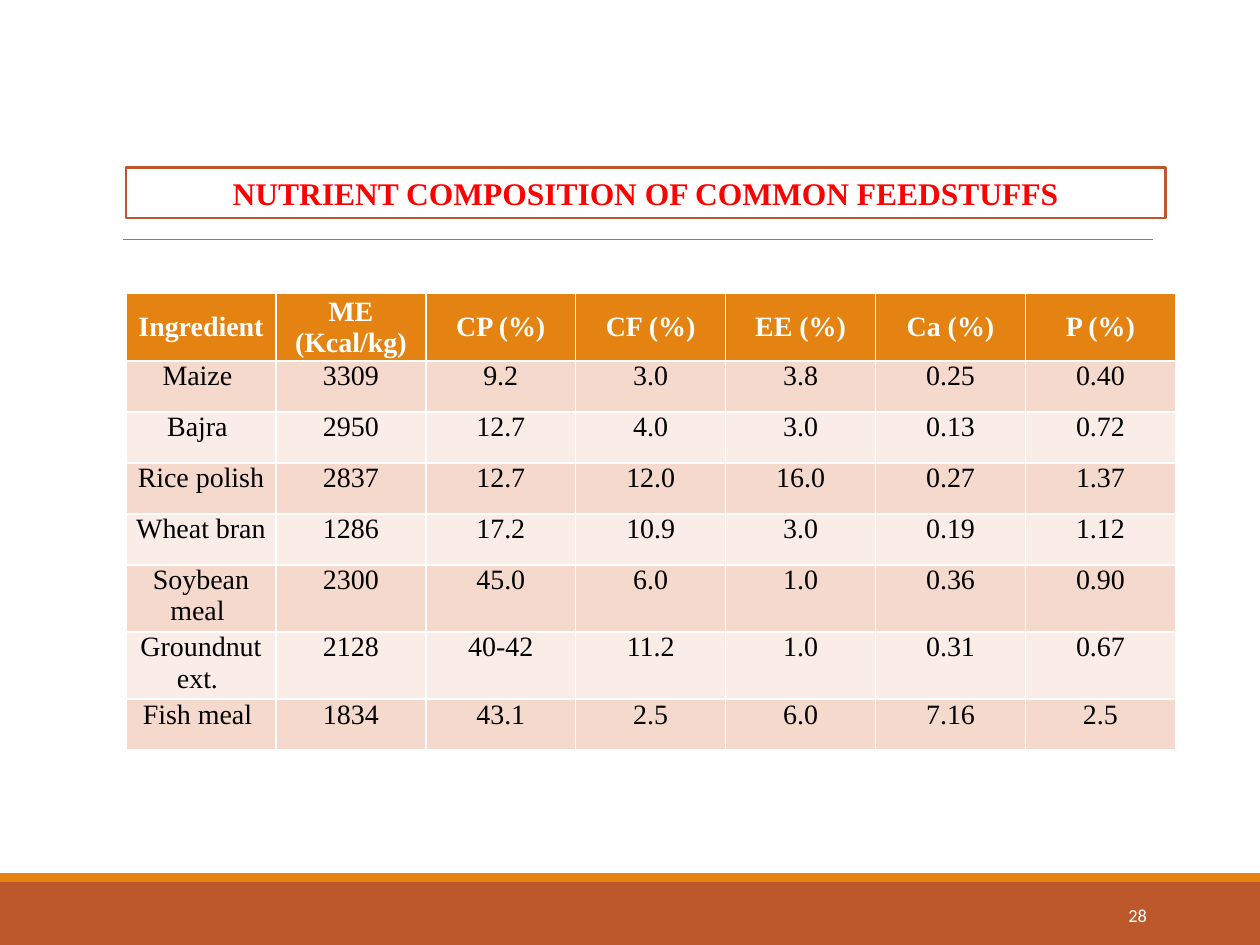
import pptx
import pptx.dml.color
import pptx.enum.shapes
import pptx.enum.text
import pptx.oxml
import pptx.util
from pptx.util import Inches

COLORS = {
    "white": "FFFFFF",
    "black": "000000",
    "red": "FF0000",
    "rust": "BD582C",
    "orange": "E48312",
    "grey": "808080",
    "band_dark": "F5D9CC",
    "band_light": "FAEDE7",
}
SERIF = "Times New Roman"

FEEDSTUFFS = [
    ["Ingredient", "ME (Kcal/kg)", "CP (%)", "CF (%)", "EE (%)", "Ca (%)", "P (%)"],
    ["Maize ", "3309", "9.2", "3.0", "3.8", "0.25", "0.40"],
    ["Bajra ", "2950", "12.7", "4.0", "3.0", "0.13", "0.72"],
    ["Rice polish ", "2837", "12.7", "12.0", "16.0", "0.27", "1.37"],
    ["Wheat bran ", "1286", "17.2", "10.9", "3.0", "0.19", "1.12"],
    ["Soybean meal ", "2300", "45.0", "6.0", "1.0", "0.36", "0.90"],
    ["Groundnut ext. ", "2128", "40-42", "11.2", "1.0", "0.31", "0.67"],
    ["Fish meal ", "1834", "43.1", "2.5", "6.0", "7.16", "2.5"],
]


def rgb(name):
    """Return the named colour."""
    return pptx.dml.color.RGBColor.from_string(COLORS[name])


def paint(target, color):
    """Fill a shape or cell with a plain colour."""
    target.fill.solid()
    target.fill.fore_color.rgb = rgb(color)


def write(tf, text, size, color, font=SERIF, bold=False, align="CENTER"):
    """Write one run in the first paragraph of a text frame."""
    p = tf.paragraphs[0]
    p.alignment = getattr(pptx.enum.text.PP_ALIGN, align)
    r = p.add_run()
    r.text = text
    r.font.size = pptx.util.Pt(size)
    r.font.name = font
    r.font.bold = bold
    r.font.color.rgb = rgb(color)


def add_bar(s, left, top, width, height, color):
    """Add a plain bar without outline."""
    sp = s.shapes.add_shape(
        pptx.enum.shapes.MSO_SHAPE.RECTANGLE, left, top, width, height)
    sp.shadow.inherit = False
    paint(sp, color)
    sp.line.fill.background()


def add_footer(s, left, top, width, height, number):
    """Add the two-tone footer and the slide number."""
    stripe = Inches(0.07)
    add_bar(s, left, top + stripe, width, height - stripe, "rust")
    add_bar(s, left, top, width, stripe, "orange")
    sp = s.shapes.add_textbox(
        left + Inches(8.12), top + Inches(0.13), Inches(1.08), Inches(0.4))
    tf = sp.text_frame
    tf.word_wrap = True
    tf.vertical_anchor = pptx.enum.text.MSO_ANCHOR.MIDDLE
    write(tf, number, 10.5, "white", font="Calibri", align="RIGHT")


def add_rule(s, left, top, width):
    """Add the thin horizontal rule."""
    line = s.shapes.add_connector(
        pptx.enum.shapes.MSO_CONNECTOR.STRAIGHT, left, top, left + width, top)
    line.line.color.rgb = rgb("grey")
    line.line.width = pptx.util.Pt(0.5)
    props = line._element.spPr
    props.append(props.makeelement(pptx.oxml.ns.qn("a:effectLst"), {}))


def add_title(s, left, top, width, height, text):
    """Place the outlined title."""
    sp = s.shapes.title
    sp.left, sp.top, sp.width, sp.height = left, top, width, height
    paint(sp, "white")
    sp.line.color.rgb = rgb("rust")
    sp.line.width = pptx.util.Pt(1.25)
    tf = sp.text_frame
    tf.word_wrap = True
    tf.auto_size = pptx.enum.text.MSO_AUTO_SIZE.NONE
    tf.vertical_anchor = pptx.enum.text.MSO_ANCHOR.MIDDLE
    write(tf, text, 18, "red", bold=True)


def add_feed_table(s, left, top, width, height, rows):
    """Add the banded nutrient table with equal rows and columns."""
    table = s.shapes.add_table(
        len(rows), len(rows[0]), left, top, width, height).table
    for i, row in enumerate(rows):
        header = i == 0
        fill = "orange" if header else ("band_light", "band_dark")[i % 2]
        for j, text in enumerate(row):
            cell = table.cell(i, j)
            paint(cell, fill)
            cell.margin_left = cell.margin_right = Inches(0.07)
            cell.margin_top = cell.margin_bottom = 0
            cell.vertical_anchor = getattr(
                pptx.enum.text.MSO_ANCHOR, "MIDDLE" if header else "TOP")
            write(cell.text_frame, text, 16, "white" if header else "black", bold=header)


def main():
    """Build and save the slide."""
    prs = pptx.Presentation()
    prs.slide_width, prs.slide_height = Inches(10), Inches(7.5)
    s = prs.slides.add_slide(prs.slide_layouts.get_by_name("Title Only"))
    add_footer(s, 0, Inches(6.93), prs.slide_width, Inches(0.57), "28")
    add_rule(s, Inches(0.98), Inches(1.9), Inches(8.17))
    add_feed_table(s, Inches(1), Inches(2.33), Inches(8.33), Inches(3.24), FEEDSTUFFS)
    add_title(s, Inches(1), Inches(1.33), Inches(8.25), Inches(0.4),
              "NUTRIENT COMPOSITION OF COMMON FEEDSTUFFS")
    prs.save("out.pptx")


if __name__ == "__main__":
    main()
